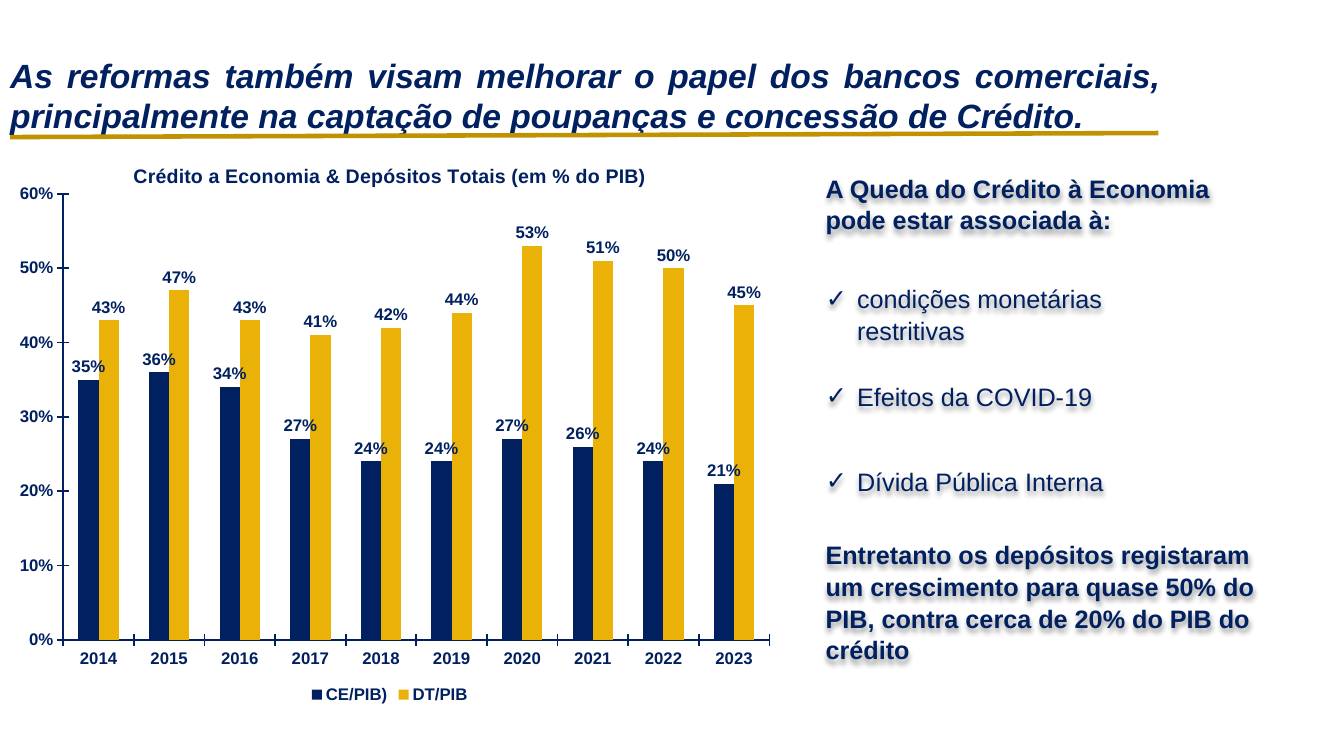
from lxml import etree
from pptx import Presentation
from pptx.chart.data import CategoryChartData
from pptx.dml.color import RGBColor
from pptx.enum.chart import XL_CHART_TYPE as ChartType
from pptx.enum.chart import XL_LABEL_POSITION as LabelPosition
from pptx.enum.chart import XL_LEGEND_POSITION as LegendPosition
from pptx.enum.chart import XL_TICK_MARK as TickMark
from pptx.enum.shapes import MSO_CONNECTOR as Connector
from pptx.enum.text import MSO_ANCHOR as Anchor
from pptx.enum.text import MSO_AUTO_SIZE as AutoSize
from pptx.enum.text import PP_ALIGN as Align
from pptx.oxml import parse_xml
from pptx.oxml.ns import nsdecls, qn
from pptx.util import Inches, Pt

NAVY, GOLD, AMBER = "002060", "C09200", "EAB208"
BODY = {"name": "Arial", "size": Pt(18), "bold": False}
STRONG = BODY | {"bold": True}
HEADING = {"name": "Arial", "size": Pt(24), "bold": True, "italic": True}
CHART_TITLE = {"name": "Arial", "size": Pt(14), "bold": True}
CHART_TEXT = {"name": "Arial", "size": Pt(12), "bold": True}

YEARS = [str(year) for year in range(2014, 2024)]
SERIES = [
    ("CE/PIB)", NAVY, [0.35, 0.36, 0.34, 0.27, 0.24, 0.24, 0.27, 0.26, 0.24, 0.21]),
    ("DT/PIB", AMBER, [0.43, 0.47, 0.43, 0.41, 0.42, 0.44, 0.53, 0.51, 0.50, 0.45]),
]
CAUSES = [
    ("condições monetárias restritivas", 0),
    ("Efeitos da COVID-19", 24),
    ("Dívida Pública Interna", 38),
]


def color(value):
    """Turn a hex string into a colour."""
    return RGBColor.from_string(value)


def format_font(font, values):
    """Apply a dict of values and the navy colour to a font."""
    for name, value in values.items():
        setattr(font, name, value)
    font.color.rgb = color(NAVY)


def place(shape, left, top, width, height):
    """Position and size a shape in inches."""
    values = {"left": left, "top": top, "width": width, "height": height}
    for name, value in values.items():
        setattr(shape, name, Inches(value))


def prepare_frame(shape, anchor):
    """Set wrapping, sizing and anchoring of a shape's text."""
    frame = shape.text_frame
    values = {"word_wrap": True, "auto_size": AutoSize.NONE, "vertical_anchor": anchor}
    for name, value in values.items():
        setattr(frame, name, value)
    return frame


def write(paragraph, text, values, spacing):
    """Write one formatted run into a paragraph."""
    paragraph.line_spacing = spacing
    run = paragraph.add_run()
    run.text = text
    format_font(run.font, values)


def add_soft_shadow(shape):
    """Give the text of an unfilled shape a soft shadow."""
    shape.fill.background()
    shape.element.spPr.append(parse_xml(
        f'<a:effectLst {nsdecls("a")}><a:outerShdw blurRad="50800" dist="38100" '
        'dir="5400000" algn="t" rotWithShape="0"><a:srgbClr val="000000">'
        '<a:alpha val="40000"/></a:srgbClr></a:outerShdw></a:effectLst>'))


def add_heading(slide):
    """Fill the title placeholder and underline it."""
    title = slide.shapes.title
    place(title, 0, 0.49, 11.61, 0.89)
    paragraph = prepare_frame(title, Anchor.TOP).paragraphs[0]
    paragraph.alignment = Align.JUSTIFY
    write(paragraph, "As reformas também visam melhorar o papel dos bancos comerciais, "
          "principalmente na captação de poupanças e concessão de Crédito.",
          HEADING, Pt(28.8))
    rule = slide.shapes.add_connector(
        Connector.STRAIGHT, Inches(0.1), Inches(1.36), Inches(11.49), Inches(1.32))
    rule.line.color.rgb = color(GOLD)
    rule.line.width = Pt(3.25)
    etree.SubElement(rule.element.spPr, qn("a:effectLst"))


def add_note(slide, text, top, height):
    """Add a bold comment beside the chart."""
    box = slide.shapes.add_textbox(0, 0, 0, 0)
    place(box, 8.09, top, 4.67, height)
    write(prepare_frame(box, Anchor.MIDDLE).paragraphs[0], text, STRONG, 1.05)
    add_soft_shadow(box)


def add_causes(slide):
    """Fill the body placeholder with the checked list."""
    body = slide.placeholders[1]
    place(body, 8.09, 2.75, 3.16, 2.3)
    frame = prepare_frame(body, Anchor.TOP)
    for index, (text, gap) in enumerate(CAUSES):
        paragraph = frame.add_paragraph() if index else frame.paragraphs[0]
        properties = paragraph._p.get_or_add_pPr()
        properties.set("marL", str(Inches(0.31)))
        properties.set("indent", str(-Inches(0.31)))
        etree.SubElement(properties, qn("a:buFont")).set("typeface", "Arial")
        etree.SubElement(properties, qn("a:buChar")).set("char", "✓")
        paragraph.space_before = Pt(gap)
        write(paragraph, text, BODY, 1.05)
    add_soft_shadow(body)


def format_axis(axis):
    """Give an axis its line, ticks and font."""
    axis.has_major_gridlines = False
    axis.major_tick_mark = TickMark.CROSS
    axis.minor_tick_mark = TickMark.NONE
    axis.format.line.color.rgb = color(NAVY)
    axis.format.line.width = Pt(1.25)
    format_font(axis.tick_labels.font, CHART_TEXT)


def set_plot_area(chart, left, top, width, height):
    """Fix the inner plot area as fractions of the chart."""
    area = chart._chartSpace.find(".//" + qn("c:plotArea"))
    for layout in area.findall(qn("c:layout")):
        area.remove(layout)
    values = {"layoutTarget": "inner", "xMode": "edge", "yMode": "edge",
              "x": left, "y": top, "w": width, "h": height}
    layout = etree.Element(qn("c:layout"))
    manual = etree.SubElement(layout, qn("c:manualLayout"))
    for name, value in values.items():
        etree.SubElement(manual, qn("c:" + name)).set("val", str(value))
    area.insert(0, layout)


def add_credit_chart(slide):
    """Add the column chart of credit and deposits."""
    data = CategoryChartData(number_format="0%")
    data.categories = YEARS
    for name, _, values in SERIES:
        data.add_series(name, values)
    chart = slide.shapes.add_chart(
        ChartType.COLUMN_CLUSTERED, Inches(0.1), Inches(1.42),
        Inches(7.54), Inches(5.6), data).chart
    format_font(chart.font, CHART_TEXT)
    chart.has_title = True
    write(chart.chart_title.text_frame.paragraphs[0],
          "Crédito a Economia & Depósitos Totais (em % do PIB)", CHART_TITLE, 1.0)
    chart.has_legend = True
    chart.legend.position = LegendPosition.BOTTOM
    chart.legend.include_in_layout = False
    format_font(chart.legend.font, CHART_TEXT)
    for axis in (chart.category_axis, chart.value_axis):
        format_axis(axis)
    values = {"minimum_scale": 0, "maximum_scale": 0.6, "major_unit": 0.1}
    for name, value in values.items():
        setattr(chart.value_axis, name, value)
    plot = chart.plots[0]
    plot.gap_width, plot.overlap, plot.vary_by_categories = 150, 0, False
    for series, (_, fill, _) in zip(plot.series, SERIES):
        series.format.fill.solid()
        series.format.fill.fore_color.rgb = color(fill)
        labels = series.data_labels
        labels.show_value = True
        labels.number_format, labels.number_format_is_linked = "0%", False
        labels.position = LabelPosition.OUTSIDE_END
        format_font(labels.font, CHART_TEXT)
    set_plot_area(chart, 0.07, 0.09, 0.93, 0.79)


def main():
    """Build and save the slide."""
    presentation = Presentation()
    presentation.slide_width = Inches(13.33)
    presentation.slide_height = Inches(7.5)
    slide = presentation.slides.add_slide(presentation.slide_layouts[1])
    add_heading(slide)
    add_credit_chart(slide)
    add_note(slide, "A Queda do Crédito à Economia pode estar associada à:", 1.57, 0.89)
    add_causes(slide)
    add_note(slide, "Entretanto os depósitos registaram um crescimento para quase 50% "
             "do PIB, contra cerca de 20% do PIB do crédito", 5.17, 1.59)
    presentation.save("out.pptx")


if __name__ == "__main__":
    main()
